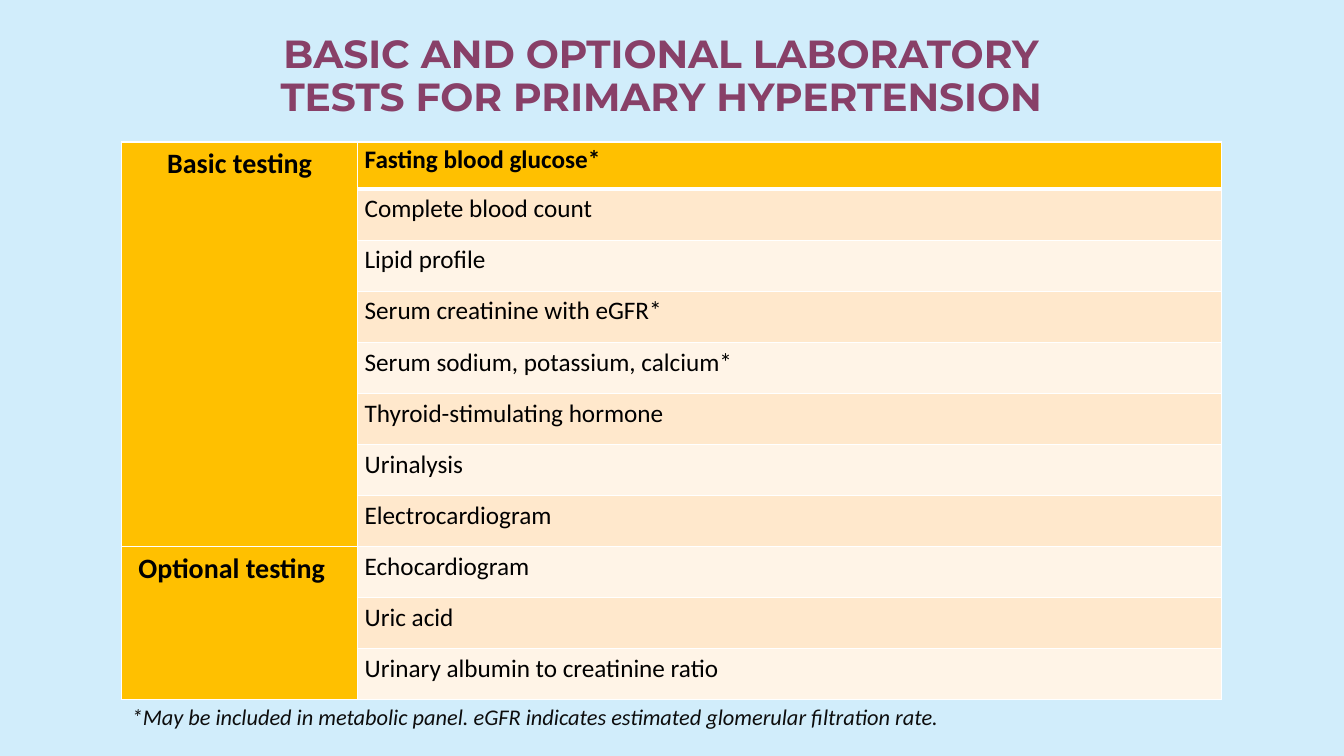
from lxml.etree import SubElement
from pptx import Presentation
from pptx.dml.color import RGBColor
from pptx.enum.text import MSO_ANCHOR, PP_ALIGN
from pptx.oxml.ns import qn
from pptx.util import Cm, Pt

# Content
TITLE = "BASIC AND OPTIONAL LABORATORY TESTS FOR PRIMARY HYPERTENSION"
FOOTNOTE = ("*May be included in metabolic panel. "
            "eGFR indicates estimated glomerular filtration rate.")
# Group label, right inset of the label (cm), tests
GROUPS = [
    ("Basic testing", 0.18, [
        "Fasting blood glucose*", "Complete blood count", "Lipid profile",
        "Serum creatinine with eGFR*", "Serum sodium, potassium, calcium*",
        "Thyroid-stimulating hormone", "Urinalysis", "Electrocardiogram"]),
    ("Optional testing", 0.58, [
        "Echocardiogram", "Uric acid", "Urinary albumin to creatinine ratio"]),
]
COLORS = {"background": "D1EDFB", "title": "884068", "text": "000000",
          "footnote": "0D0D0D", "accent": "FFC000", "odd": "FFE8CC",
          "even": "FFF4E7", "border": "FFFFFF"}

# Layout in cm
LEFT, TABLE_TOP, TABLE_HEIGHT = 3.07, 3.58, 14.05
LABEL_WIDTH, TEST_WIDTH = 5.94, 21.77
FIRST_ROW = 1.19
INSET = 0.18


def rgb(name):
    return RGBColor.from_string(COLORS[name])


def write(frame, text, size, color, font="Calibri", bold=False, italic=False,
          align=PP_ALIGN.LEFT, spacing=1.0):
    paragraph = frame.paragraphs[0]
    paragraph.alignment = align
    paragraph.line_spacing = spacing
    run = paragraph.add_run()
    run.text = text
    run.font.name, run.font.size = font, Pt(size)
    run.font.bold, run.font.italic = bold, italic
    run.font.color.rgb = rgb(color)


def add_text(left, top, width, height):
    box = slide.shapes.add_textbox(Cm(left), Cm(top), Cm(width), Cm(height))
    box.text_frame.word_wrap = True
    return box.text_frame


def style_cell(cell, fill, bottom=1, right_inset=INSET):
    cell.margin_left, cell.margin_right = Cm(INSET), Cm(right_inset)
    cell.margin_top = cell.margin_bottom = 0
    properties = cell._tc.get_or_add_tcPr()
    for side, width in (("L", 1), ("R", 1), ("T", 1), ("B", bottom)):
        line = SubElement(properties, qn(f"a:ln{side}"), w=str(Pt(width)))
        solid = SubElement(line, qn("a:solidFill"))
        SubElement(solid, qn("a:srgbClr"), val=COLORS["border"])
    cell.fill.solid()
    cell.fill.fore_color.rgb = rgb(fill)


prs = Presentation()
prs.slide_width, prs.slide_height = Cm(33.87), Cm(19.05)
slide = prs.slides.add_slide(prs.slide_layouts[6])
slide.background.fill.solid()
slide.background.fill.fore_color.rgb = rgb("background")

# Title
title = add_text(5.79, 0.64, 21.74, 2.62)
title.vertical_anchor = MSO_ANCHOR.MIDDLE
write(title, TITLE, 28, "title", "Montserrat", bold=True,
      align=PP_ALIGN.CENTER, spacing=0.9)

# Table of tests
row_count = sum(len(tests) for _, _, tests in GROUPS)
table = slide.shapes.add_table(
    row_count, 2, Cm(LEFT), Cm(TABLE_TOP),
    Cm(LABEL_WIDTH + TEST_WIDTH), Cm(TABLE_HEIGHT)).table
table.columns[0].width, table.columns[1].width = Cm(LABEL_WIDTH), Cm(TEST_WIDTH)
other_row = (TABLE_HEIGHT - FIRST_ROW) / (row_count - 1)

row = 0
for label, right_inset, tests in GROUPS:
    first, last = row, row + len(tests) - 1
    for test in tests:
        is_header = row == 0
        table.rows[row].height = Cm(FIRST_ROW if is_header else other_row)
        label_bottom = 3 if row == last and last < row_count - 1 else 1
        style_cell(table.cell(row, 0), "accent", label_bottom, right_inset)
        band = "accent" if is_header else "odd" if row % 2 else "even"
        style_cell(table.cell(row, 1), band, 3 if is_header else 1)
        write(table.cell(row, 1).text_frame, test, 18, "text", bold=is_header,
              spacing=1.07 if is_header else 1.15)
        row += 1
    table.cell(first, 0).merge(table.cell(last, 0))
    write(table.cell(first, 0).text_frame, label, 20, "text", bold=True,
          align=PP_ALIGN.CENTER, spacing=1.15)

# Footnote
write(add_text(LEFT, 17.6, 21.74, 0.94), FOOTNOTE, 16, "footnote", italic=True)

prs.save("out.pptx")
